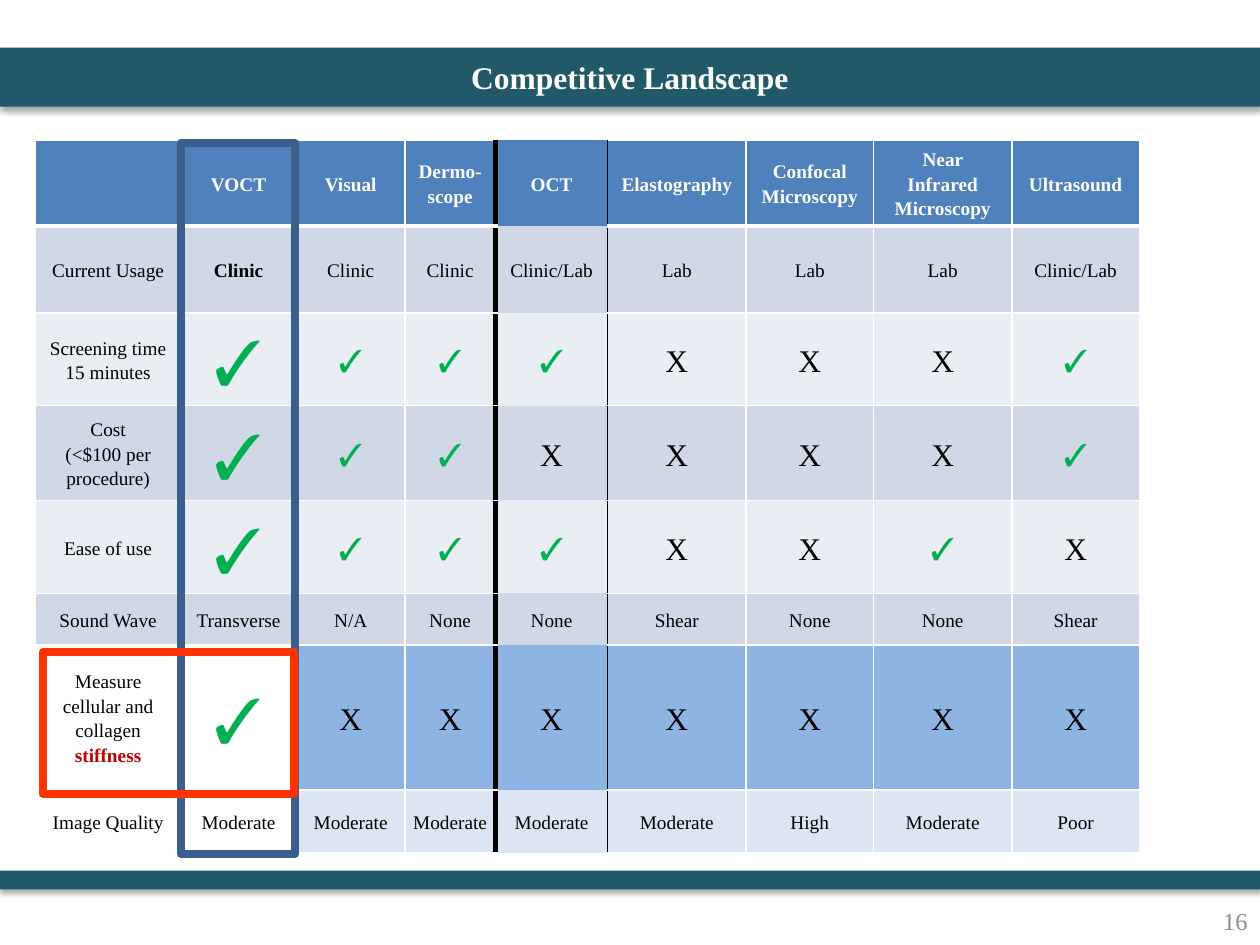
from dataclasses import dataclass
from typing import Optional

import pptx
import pptx.dml.color
import pptx.enum.shapes
import pptx.enum.text
import pptx.oxml
import pptx.oxml.ns
import pptx.util
from pptx.dml.color import RGBColor
from pptx.util import Cm, Pt

FONT = "Times New Roman"
WHITE = RGBColor(0xFF, 0xFF, 0xFF)
BLACK = RGBColor(0x00, 0x00, 0x00)
TEAL = RGBColor(0x21, 0x59, 0x68)
GRAY = RGBColor(0x8C, 0x8C, 0x8C)
HEADER_BLUE = RGBColor(0x4F, 0x81, 0xBD)
BAND_DARK = RGBColor(0xD0, 0xD8, 0xE8)
BAND_LIGHT = RGBColor(0xE9, 0xED, 0xF4)
KEY_BLUE = RGBColor(0x8E, 0xB4, 0xE3)
PALE_BLUE = RGBColor(0xDC, 0xE6, 0xF2)
CHECK_GREEN = RGBColor(0x00, 0xB0, 0x50)
DARK_RED = RGBColor(0xC0, 0x00, 0x00)
FRAME_BLUE = RGBColor(0x3A, 0x5F, 0x8C)
FRAME_RED = RGBColor(0xFF, 0x33, 0x00)

CENTER = pptx.enum.text.PP_ALIGN.CENTER
RIGHT = pptx.enum.text.PP_ALIGN.RIGHT
MIDDLE = pptx.enum.text.MSO_ANCHOR.MIDDLE
VOCT_COLUMN, DERMOSCOPE_COLUMN, OCT_COLUMN = 1, 3, 4
COLUMN_WIDTHS = (2.92, 2.34, 2.18, 1.83, 2.26, 2.79, 2.57, 2.79, 2.57)


@dataclass(frozen=True)
class Box:
    """Left, top, width and height in centimetres."""
    left: float
    top: float
    width: float
    height: float

    def lengths(self) -> tuple:
        return Cm(self.left), Cm(self.top), Cm(self.width), Cm(self.height)


@dataclass(frozen=True)
class TextStyle:
    size: float
    color: RGBColor
    bold: bool = False


@dataclass(frozen=True)
class Row:
    height: float
    fill: RGBColor
    cells: tuple
    open_start: bool = False  # the first two cells have no fill


@dataclass(frozen=True)
class Border:
    color: Optional[RGBColor]
    points: float = 1


HEADER_STYLE = TextStyle(11, WHITE, True)
ROWS = (
    Row(1.47, HEADER_BLUE, ("", "VOCT", "Visual", "Dermo-scope", "OCT", "Elastography",
                            "Confocal Microscopy", "Near Infrared Microscopy", "Ultrasound")),
    Row(1.75, BAND_DARK, ("Current Usage", "Clinic", "Clinic", "Clinic", "Clinic/Lab",
                          "Lab", "Lab", "Lab", "Clinic/Lab")),
    Row(1.8, BAND_LIGHT, ("Screening time 15 minutes", "✓", "✓", "✓", "✓", "X", "X", "X", "✓")),
    Row(1.91, BAND_DARK, ("Cost\n(<$100 per procedure)", "✓", "✓", "✓", "X", "X", "X", "X", "✓")),
    Row(1.8, BAND_LIGHT, ("Ease of use", "✓", "✓", "✓", "✓", "X", "X", "✓", "X")),
    Row(1.04, BAND_DARK, ("Sound Wave", "Transverse", "N/A", "None", "None", "Shear",
                          "None", "None", "Shear")),
    Row(2.92, KEY_BLUE, ("Measure cellular and collagen ", "✓") + ("X",) * 7, True),
    Row(1.27, PALE_BLUE, ("Image Quality",) + ("Moderate",) * 5 + ("High", "Moderate", "Poor"), True),
)
STIFFNESS_ROW = 6


def style_paragraph(paragraph, style: TextStyle, alignment=CENTER) -> None:
    paragraph.alignment = alignment
    paragraph.font.name = FONT
    paragraph.font.size = Pt(style.size)
    paragraph.font.bold = style.bold
    paragraph.font.color.rgb = style.color


def add_bar(slide, box: Box) -> None:
    bar = slide.shapes.add_shape(pptx.enum.shapes.MSO_SHAPE.RECTANGLE, *box.lengths())
    bar.fill.solid()
    bar.fill.fore_color.rgb = TEAL
    bar.line.fill.background()
    bar._element.spPr.append(pptx.oxml.parse_xml(
        f'<a:effectLst {pptx.oxml.ns.nsdecls("a")}>'
        f'<a:outerShdw blurRad="{Pt(3.1)}" dist="{Pt(1.8)}" dir="5400000" rotWithShape="0">'
        '<a:srgbClr val="000000"><a:alpha val="35000"/></a:srgbClr>'
        '</a:outerShdw></a:effectLst>'))


def add_label(slide, box: Box, text: str, style: TextStyle, alignment) -> None:
    frame = slide.shapes.add_textbox(*box.lengths()).text_frame
    frame.word_wrap = True
    frame.vertical_anchor = MIDDLE
    frame.text = text
    style_paragraph(frame.paragraphs[0], style, alignment)


def add_frame(slide, box: Box, color: RGBColor) -> None:
    frame = slide.shapes.add_shape(pptx.enum.shapes.MSO_SHAPE.RECTANGLE, *box.lengths())
    frame.shadow.inherit = False
    frame.fill.background()
    frame.line.color.rgb = color
    frame.line.width = Pt(4.5)


def set_borders(cell, borders: dict) -> None:
    properties = cell._tc.get_or_add_tcPr()
    for side in "LRTB":
        border = borders[side]
        paint = ("<a:noFill/>" if border.color is None else
                 f'<a:solidFill><a:srgbClr val="{border.color}"/></a:solidFill>')
        properties.append(pptx.oxml.parse_xml(
            f'<a:ln{side} {pptx.oxml.ns.nsdecls("a")} w="{Pt(border.points)}">{paint}</a:ln{side}>'))


def cell_borders(row_index: int, column_index: int) -> dict:
    """White grid, with black rules on both sides of the OCT column."""
    borders = dict.fromkeys("LRTB", Border(WHITE))
    if row_index < 2:
        borders["B" if row_index == 0 else "T"] = Border(WHITE, 3)
    if column_index == DERMOSCOPE_COLUMN:
        borders["R"] = Border(BLACK, 3)
    elif column_index == OCT_COLUMN:
        borders = {"L": Border(BLACK, 3), "R": Border(BLACK),
                   "T": Border(None), "B": Border(None)}
    elif column_index == OCT_COLUMN + 1:
        borders["L"] = Border(BLACK)
    return borders


def cell_style(text: str, row_index: int, column_index: int) -> TextStyle:
    if row_index == 0:
        return HEADER_STYLE
    is_voct = column_index == VOCT_COLUMN
    if text == "✓":
        return TextStyle(36 if is_voct else 18, CHECK_GREEN, is_voct)
    if text == "X":
        return TextStyle(18, BLACK)
    return TextStyle(11, BLACK, is_voct and row_index == 1)


def fill_cell(cell, row: Row, row_index: int, column_index: int) -> None:
    text = row.cells[column_index]
    set_borders(cell, cell_borders(row_index, column_index))
    if row.open_start and column_index <= VOCT_COLUMN:
        cell.fill.background()
    else:
        cell.fill.solid()
        cell.fill.fore_color.rgb = row.fill
    cell.vertical_anchor = MIDDLE
    cell.margin_top = cell.margin_bottom = Cm(0.06)
    if column_index == DERMOSCOPE_COLUMN:
        cell.margin_left = cell.margin_right = Cm(0.13)
    cell.text_frame.text = text
    for paragraph in cell.text_frame.paragraphs:
        style_paragraph(paragraph, cell_style(text, row_index, column_index))
        paragraph.line_spacing = 1.15
        if row_index == 0:
            paragraph.space_after = Pt(10)


def add_comparison_table(slide, box: Box) -> None:
    graphic_frame = slide.shapes.add_table(len(ROWS), len(COLUMN_WIDTHS), *box.lengths())
    table = graphic_frame.table
    table.first_row = table.horz_banding = False
    for column, width in zip(table.columns, COLUMN_WIDTHS):
        column.width = Cm(width)
    for row_index, row in enumerate(ROWS):
        table.rows[row_index].height = Cm(row.height)
        for column_index in range(len(COLUMN_WIDTHS)):
            fill_cell(table.cell(row_index, column_index), row, row_index, column_index)
    stiffness = table.cell(STIFFNESS_ROW, 0).text_frame.paragraphs[0].add_run()
    stiffness.text = "stiffness"
    stiffness.font.bold = True
    stiffness.font.color.rgb = DARK_RED


def main() -> None:
    presentation = pptx.Presentation()
    presentation.slide_width, presentation.slide_height = Cm(25.4), Cm(19.05)
    slide = presentation.slides.add_slide(presentation.slide_layouts[6])
    title_bar = Box(0, 0.96, 25.4, 1.19)
    add_bar(slide, title_bar)
    add_bar(slide, Box(0, 17.55, 25.4, 0.38))
    add_label(slide, Box(19.69, 18.06, 5.71, 1.02), "16", TextStyle(14, GRAY), RIGHT)
    add_label(slide, title_bar, "Competitive Landscape", TextStyle(18, WHITE, True), CENTER)
    add_comparison_table(slide, Box(0.72, 2.83, 22.25, 14.48))
    add_frame(slide, Box(3.65, 2.88, 2.3, 14.34), FRAME_BLUE)
    add_frame(slide, Box(0.86, 13.15, 5.06, 2.85), FRAME_RED)
    presentation.save("out.pptx")


if __name__ == "__main__":
    main()
